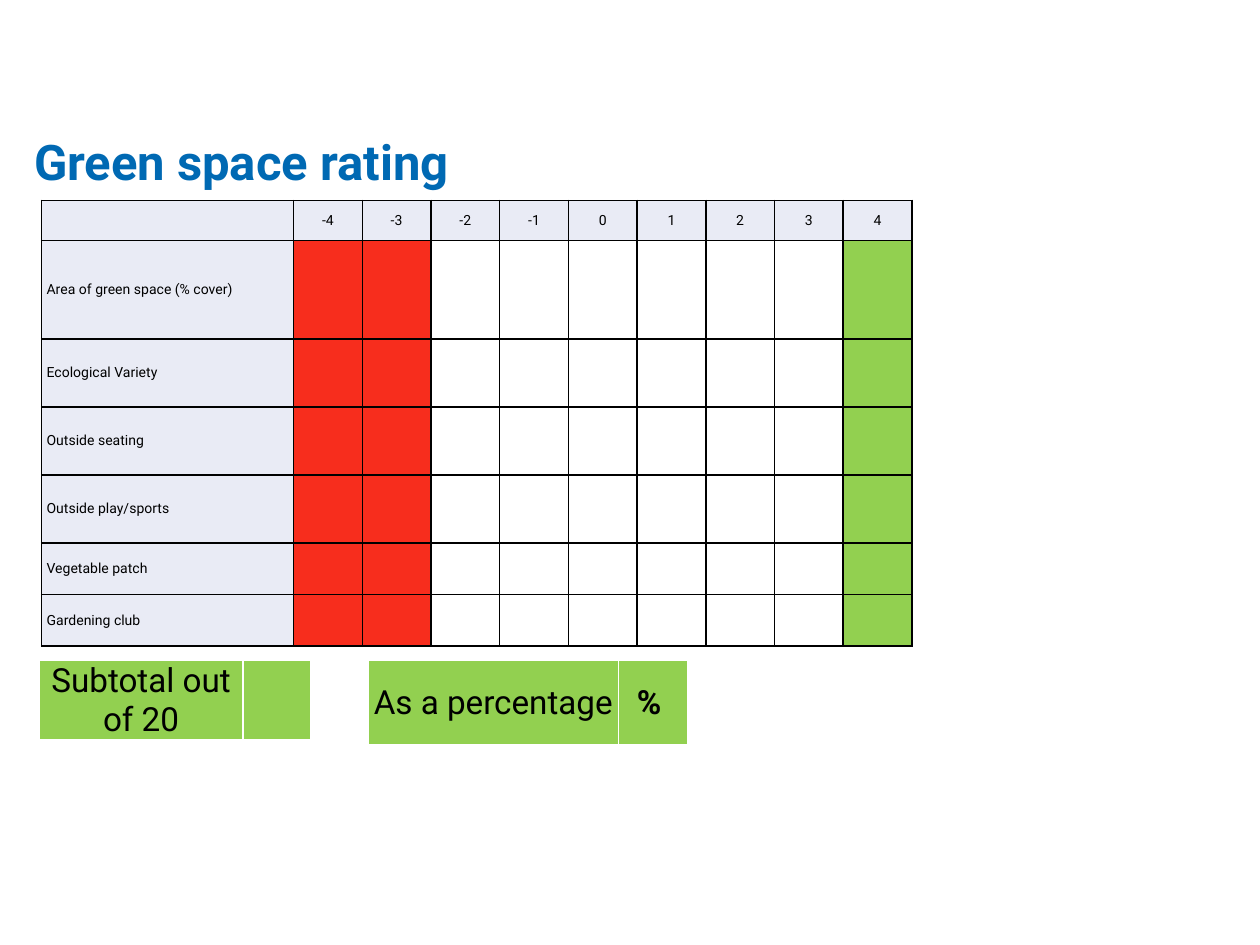
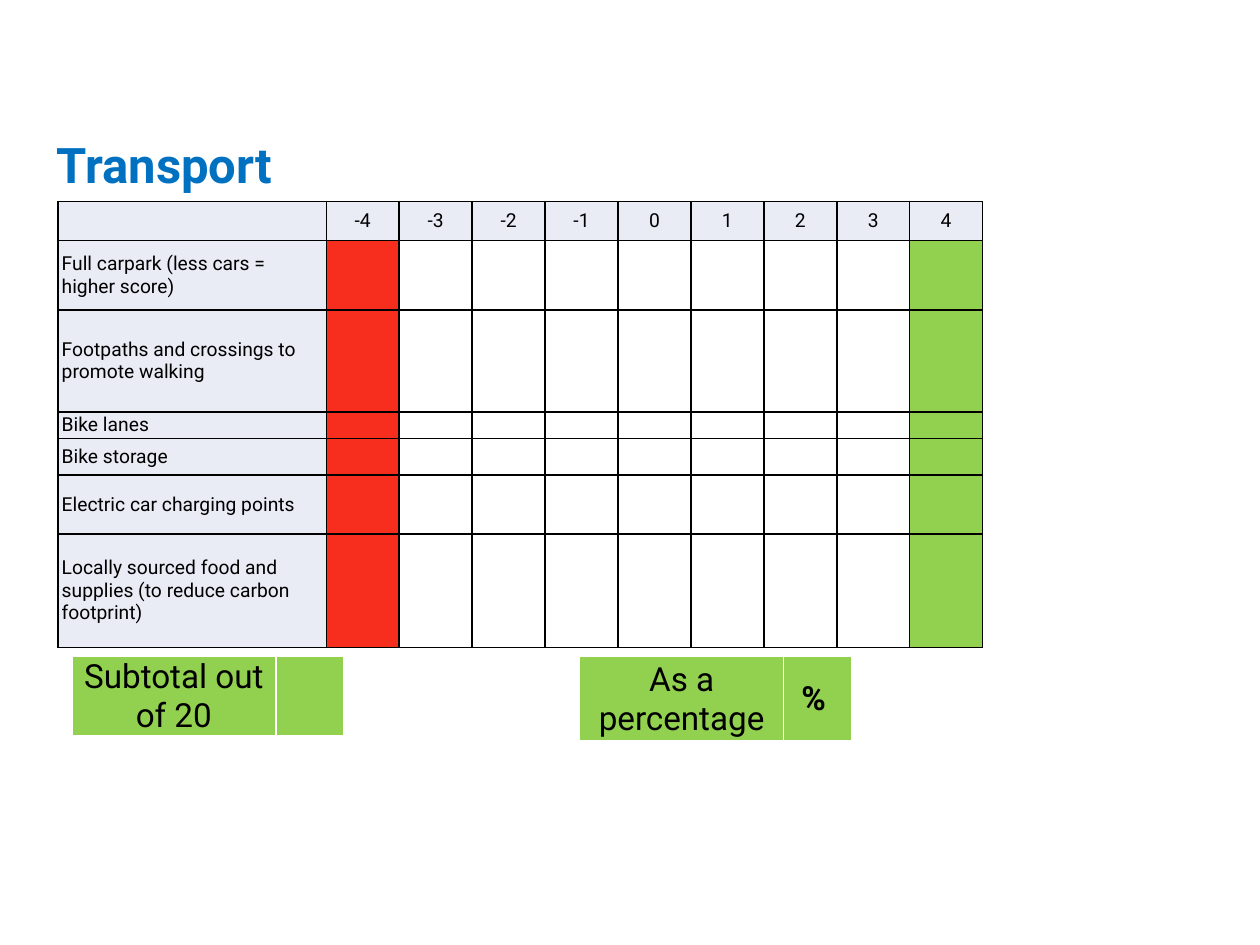
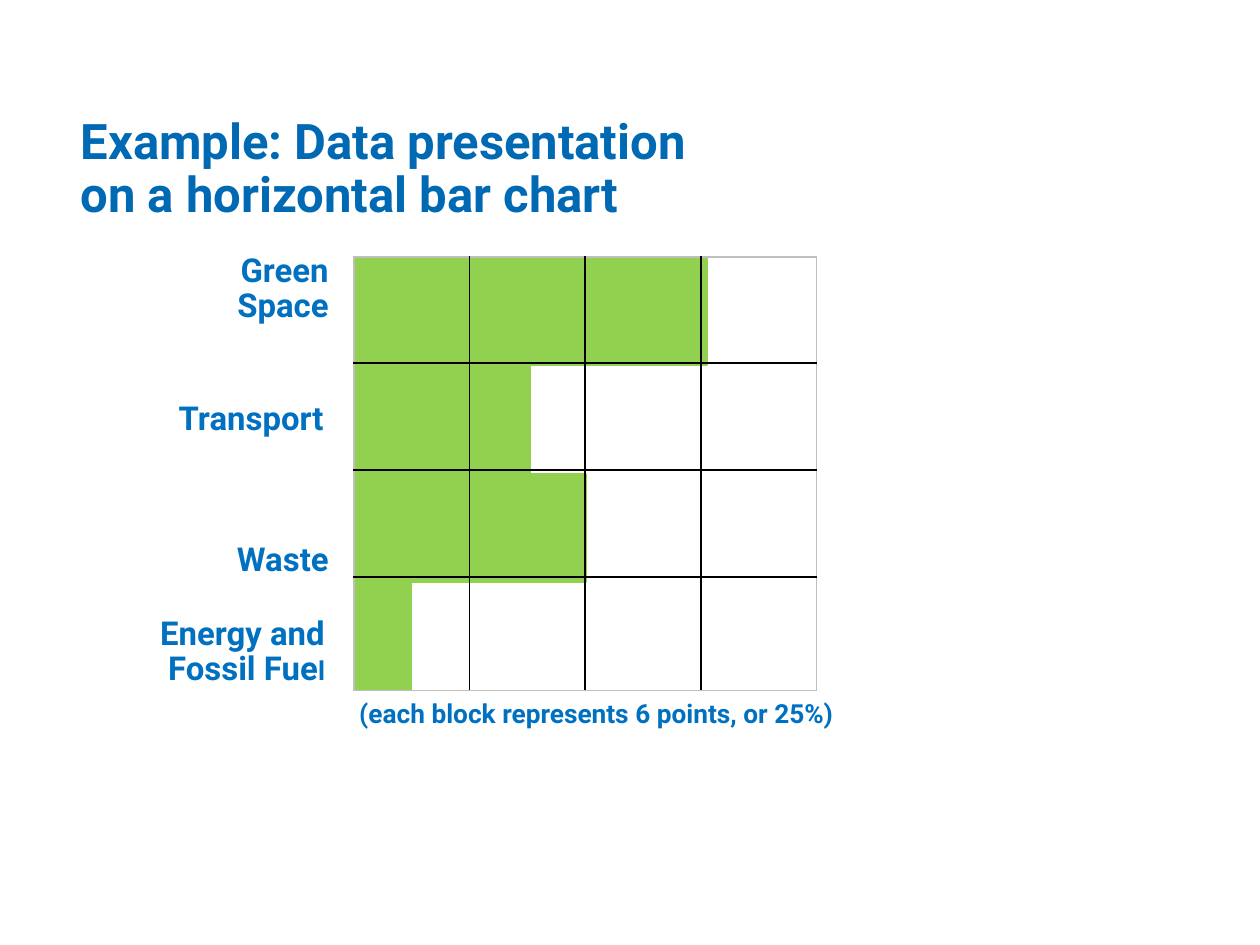
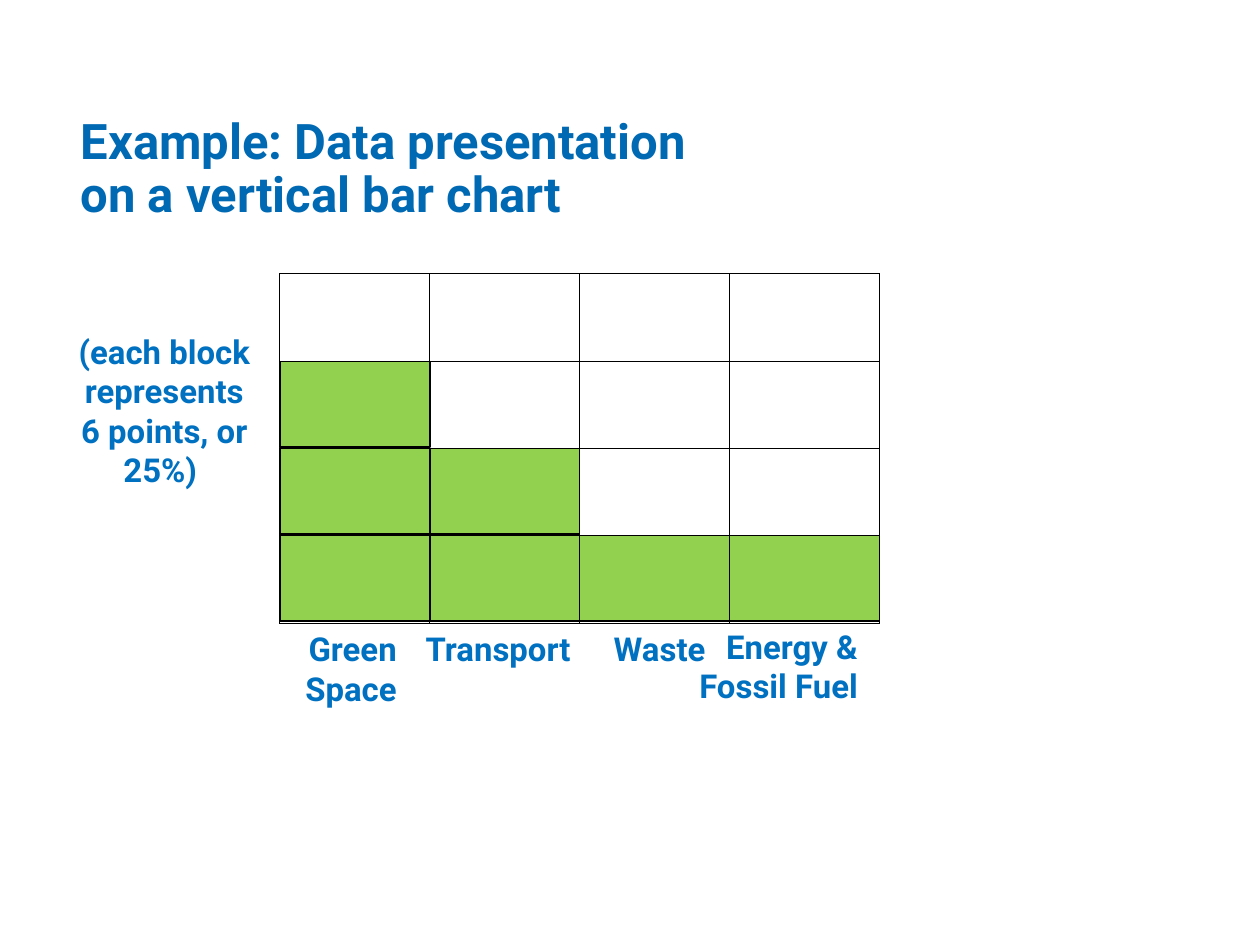
from lxml.etree import SubElement
from pptx import Presentation
from pptx.dml.color import RGBColor
from pptx.enum.shapes import MSO_SHAPE
from pptx.enum.text import MSO_ANCHOR, MSO_AUTO_SIZE, PP_ALIGN
from pptx.oxml import parse_xml
from pptx.oxml.ns import nsdecls, qn
from pptx.util import Pt

PX = 9144  # EMU in one px, 100 px to the inch
FONT = "Roboto"
TITLE_BLUE = RGBColor(0x00, 0x69, 0xB3)
BLUE = RGBColor(0x00, 0x70, 0xC0)
GREEN = RGBColor(0x92, 0xD0, 0x50)
RED = RGBColor(0xF7, 0x2D, 0x1D)
HEADER = RGBColor(0xE9, 0xEB, 0xF5)
GRAY = RGBColor(0xBF, 0xBF, 0xBF)
BLACK = RGBColor(0x00, 0x00, 0x00)
WHITE = RGBColor(0xFF, 0xFF, 0xFF)
SCORES = range(-4, 5)


def px(*lengths):
    return [round(length * PX) for length in lengths]


# Text
def format_frame(frame, insets, anchor):
    frame.word_wrap = True
    frame.auto_size = MSO_AUTO_SIZE.NONE
    frame.vertical_anchor = anchor
    (frame.margin_left, frame.margin_top,
     frame.margin_right, frame.margin_bottom) = px(*insets)


def format_font(font, size, color, bold=False):
    font.name = FONT
    font.size = Pt(size)
    font.color.rgb = color
    font.bold = bold


def write(frame, text, size, color, align, bold=False, spacing=1.0):
    frame.text = text
    paragraph = frame.paragraphs[0]
    paragraph.alignment = align
    paragraph.line_spacing = spacing
    for run in paragraph.runs:
        format_font(run.font, size, color, bold)
    return paragraph


def add_title(slide, box, text, color=TITLE_BLUE, insets=(10, 5, 10, 5), anchor=MSO_ANCHOR.BOTTOM):
    title = slide.shapes.title
    title.left, title.top, title.width, title.height = px(*box)
    format_frame(title.text_frame, insets, anchor)
    write(title.text_frame, text, 28, color, PP_ALIGN.LEFT, True, 0.9)


def add_label(slide, box, text, size=18.8, align=PP_ALIGN.RIGHT, anchor=MSO_ANCHOR.TOP, spacing=1.0):
    label = slide.shapes.add_textbox(*px(*box))
    format_frame(label.text_frame, (7, 4, 7, 4), anchor)
    return write(label.text_frame, text, size, BLUE, align, True, spacing)


# Tables
def set_borders(cell, colors, width):
    """Colours run left, right, top, bottom."""
    properties = cell._tc.get_or_add_tcPr()
    for index, (side, color) in enumerate(zip("LRTB", colors)):
        properties.insert(index, parse_xml(
            f'<a:ln{side} {nsdecls("a")} w="{Pt(width)}"><a:solidFill>'
            f'<a:srgbClr val="{color}"/></a:solidFill></a:ln{side}>'))


def add_grid(slide, left, top, columns, rows, border=BLACK, width=1.0, edge=None):
    edge = edge or border
    frame = slide.shapes.add_table(
        len(rows), len(columns), *px(left, top, sum(columns), sum(rows)))
    table = frame.table
    table.first_row = table.horz_banding = False
    for column, length in zip(table.columns, px(*columns)):
        column.width = length
    for row, length in zip(table.rows, px(*rows)):
        row.height = length
    last_row, last_column = len(rows) - 1, len(columns) - 1
    for r in range(len(rows)):
        for c in range(len(columns)):
            cell = table.cell(r, c)
            cell.fill.background()
            outer = (c == 0, c == last_column, r == 0, r == last_row)
            set_borders(cell, [edge if side else border for side in outer], width)
    return table


def fill_cell(cell, color, insets, text="", size=8, align=PP_ALIGN.CENTER, bold=False):
    if color is not None:
        cell.fill.solid()
        cell.fill.fore_color.rgb = color
    cell.vertical_anchor = MSO_ANCHOR.MIDDLE
    cell.margin_left, cell.margin_top, cell.margin_right, cell.margin_bottom = px(*insets)
    if text:
        write(cell.text_frame, text, size, BLACK, align, bold)
    else:  # keeps short rows from growing
        SubElement(cell.text_frame.paragraphs[0]._p, qn("a:endParaRPr"), sz=str(size * 100))


def add_rating_table(slide, box, label_width, rows, labels, size, red_scores, insets):
    left, top, width = box
    score_width = (width - label_width) / len(SCORES)
    table = add_grid(slide, left, top, [label_width] + [score_width] * len(SCORES), rows)
    for r, label in enumerate([""] + labels):
        fill_cell(table.cell(r, 0), HEADER, insets, label, size, PP_ALIGN.LEFT)
        for c, score in enumerate(SCORES, 1):
            if r == 0:
                color = HEADER
            elif score in red_scores:
                color = RED
            else:
                color = GREEN if score == max(SCORES) else None
            fill_cell(table.cell(r, c), color, insets, "" if r else str(score), size)


def add_result(slide, left, top, columns, height, label, unit=""):
    table = add_grid(slide, left, top, columns, [height], WHITE)
    insets = (1, 1, 1, 0)
    fill_cell(table.cell(0, 0), GREEN, insets, label, 19)
    fill_cell(table.cell(0, 1), GREEN, insets, unit, 19, bold=True)


def add_results(slide, top, subtotal_left, percent_left, percent_columns):
    add_result(slide, subtotal_left, top, (162, 54), 63, "Subtotal out of 20")
    add_result(slide, percent_left, top, percent_columns, 67, "As a percentage", "% ")


# Bars
def add_block(slide, box, line_color):
    block = slide.shapes.add_shape(MSO_SHAPE.RECTANGLE, *px(*box))
    block.shadow.inherit = False
    block.fill.solid()
    block.fill.fore_color.rgb = GREEN
    block.line.color.rgb = line_color
    block.line.width = Pt(1)


def add_horizontal_bars(slide, left, top):
    for index, length in enumerate((280, 140, 184, 45)):
        add_block(slide, (left, top + 86 * index, length, 86), GREEN)
    add_grid(slide, left, top, [91.75] * 4, (84, 85, 85, 90), edge=GRAY)


def add_vertical_bars(slide, left, top):
    column, row = 119, 69
    add_grid(slide, left, top, [column] * 4, [69.5] * 4, width=0.5)
    for c, count in enumerate((3, 2, 1, 1)):
        for level in range(count):
            add_block(slide, (left + c * column, top + (3 - level) * row + 1, column, 68), BLACK)


# Slides
def build_green_space(slide):
    add_title(slide, (20, 106, 750, 46), "Green space rating",
              insets=(7, 4, 7, 4), anchor=MSO_ANCHOR.TOP)
    add_results(slide, 524, 31, 292, (199, 55))
    labels = ["Area of green space (% cover)", "Ecological Variety", "Outside seating",
              "Outside play/sports", "Vegetable patch", "Gardening club"]
    add_rating_table(slide, (33, 159, 691), 200, (32, 78, 54, 54, 54, 41, 41),
                     labels, 8, (-4, -3), (4, 2, 4, 2))


def build_transport(slide):
    add_title(slide, (38, 108, 750, 46), "Transport", BLUE, (7, 4, 7, 4), MSO_ANCHOR.TOP)
    add_results(slide, 521, 57, 460, (162, 54))
    labels = ["Full carpark (less cars = higher score)",
              "Footpaths and crossings to promote walking", "Bike lanes", "Bike storage",
              "Electric car charging points",
              "Locally sourced food and supplies (to reduce carbon footprint)"]
    add_rating_table(slide, (46, 160, 734), 213, (31, 55, 81, 21, 29, 47, 90),
                     labels, 11, (-4,), (3, 1, 3, 1))


def build_horizontal_example(slide):
    add_title(slide, (54, 113, 745, 69), "Example: Data presentation\von a horizontal bar chart")
    add_horizontal_bars(slide, 281, 204)
    bottom = {"anchor": MSO_ANCHOR.BOTTOM, "spacing": 0.9}
    add_label(slide, (126, 229, 142, 33), "Green Space", **bottom)
    add_label(slide, (125, 318, 139, 33), "Transport", **bottom)
    add_label(slide, (126, 430, 142, 33), "Waste", **bottom)
    energy = add_label(slide, (68, 505, 197, 45), "Energy and Fossil Fue", **bottom)
    last_letter = energy.add_run()
    last_letter.text = "l"
    format_font(last_letter.font, 15, BLUE, True)
    add_label(slide, (263, 550, 426, 33), "(each block represents 6 points, or 25%) ",
              15, PP_ALIGN.CENTER, **bottom)


def build_vertical_example(slide):
    add_title(slide, (54, 113, 745, 69), "Example: Data presentation\von a vertical bar chart")
    add_vertical_bars(slide, 222, 217)
    add_label(slide, (230, 495, 92, 71), "Green Space")
    add_label(slide, (299, 495, 161, 39), "Transport")
    add_label(slide, (459, 495, 108, 39), "Waste")
    add_label(slide, (534, 493, 154, 102), "Energy & Fossil Fuel")
    add_label(slide, (54, 259, 153, 165), "(each block represents 6 points, or 25%) ",
              align=PP_ALIGN.CENTER)


def main():
    presentation = Presentation()
    presentation.slide_width, presentation.slide_height = px(1000, 750)
    title_only = presentation.slide_layouts[5]
    for build in (build_green_space, build_transport,
                  build_horizontal_example, build_vertical_example):
        build(presentation.slides.add_slide(title_only))
    presentation.save("out.pptx")


if __name__ == "__main__":
    main()
